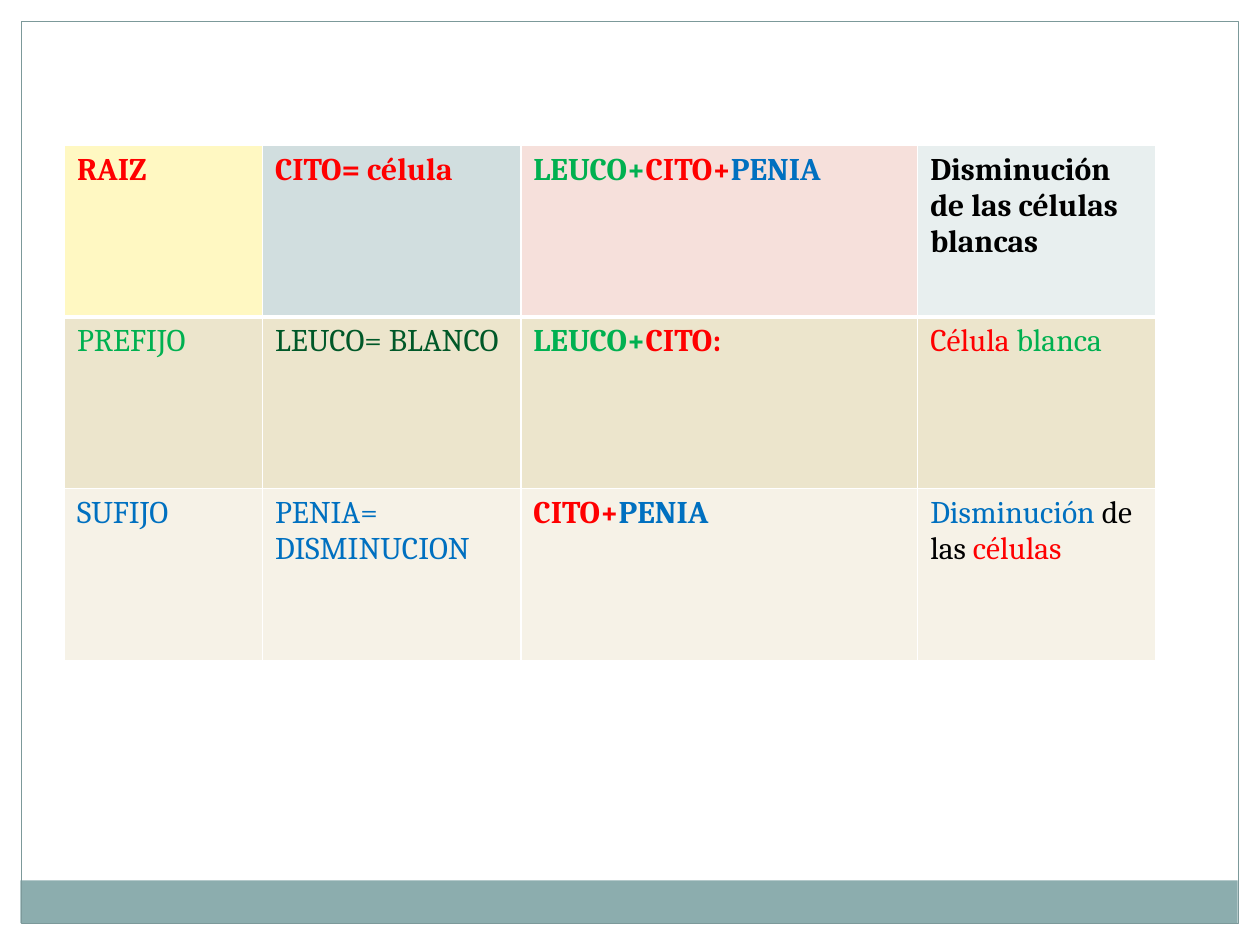
"""Builds a slide with a table of word roots, prefixes and suffixes."""
from pptx import Presentation
from pptx.dml.color import RGBColor
from pptx.enum.shapes import MSO_SHAPE
from pptx.enum.text import PP_ALIGN
from pptx.oxml import parse_xml
from pptx.oxml.ns import nsdecls
from pptx.util import Cm, Pt

RED, GREEN, BLUE, BLACK = "FF0000", "00B050", "0070C0", "000000"


def rgb(value):
    return RGBColor.from_string(value)


def border(side, width):
    return parse_xml(
        f'<a:{side} {nsdecls("a")} w="{Pt(width)}"><a:solidFill>'
        f'<a:srgbClr val="FFFFFF"/></a:solidFill></a:{side}>')


prs = Presentation()
prs.slide_width, prs.slide_height = Cm(25.4), Cm(19.05)
s = prs.slides.add_slide(prs.slide_layouts[6])

frame = [
    (0, 0, 25.4, 0.43, "FFFFFF", None),
    (24.97, 0, 0.43, 19.05, "FFFFFF", None),
    (0, 0, 0.43, 19.05, "FFFFFF", None),
    (0.41, 17.75, 24.54, 0.86, "8CADAE", None),
    (0.43, 0.43, 24.54, 18.19, None, "7C999A"),
]
for *box, fill, line in frame:
    sp = s.shapes.add_shape(MSO_SHAPE.RECTANGLE, *[Cm(v) for v in box])
    sp.shadow.inherit = False
    if fill:
        sp.fill.solid()
        sp.fill.fore_color.rgb = rgb(fill)
    else:
        sp.fill.background()
    if line:
        sp.line.color.rgb = rgb(line)
        sp.line.width = Pt(0.75)
    else:
        sp.line.fill.background()

widths = [3.99, 5.21, 8, 4.8]
row_height = 3.46
fills = [
    ["FFF8C2", "D1DEDF", "F6E0DB", "E8EFEF"],
    ["ECE5CC"] * 4,
    ["F6F2E7"] * 4,
]
rows = [
    [[("RAIZ", RED)],
     [("CITO= célula", RED)],
     [("LEUCO+", GREEN), ("CITO+", RED), ("PENIA", BLUE)],
     [("Disminución de las células blancas", BLACK)]],
    [[("PREFIJO", GREEN)],
     [("LEUCO= BLANCO", "005828")],
     [("LEUCO+", GREEN), ("CITO:", RED)],
     [("Célula ", RED), ("blanca", GREEN)]],
    [[("SUFIJO", BLUE)],
     [("PENIA= DISMINUCION", BLUE)],
     [("CITO+", RED), ("PENIA", BLUE)],
     [("Disminución ", BLUE), ("de las ", BLACK), ("células", RED)]],
]

tbl = s.shapes.add_table(len(rows), len(widths), Cm(1.3), Cm(2.93),
                         Cm(sum(widths)), Cm(row_height * len(rows))).table
for col, width in zip(tbl.columns, widths):
    col.width = Cm(width)
for row in tbl.rows:
    row.height = Cm(row_height)

for i, row in enumerate(rows):
    sides = {"lnL": 1, "lnR": 1, "lnT": 3 if i == 1 else 1, "lnB": 3 if i == 0 else 1}
    for j, runs in enumerate(row):
        cell = tbl.cell(i, j)
        tcPr = cell._tc.get_or_add_tcPr()
        for side, width in sides.items():
            tcPr.append(border(side, width))
        cell.fill.solid()
        cell.fill.fore_color.rgb = rgb(fills[i][j])
        p = cell.text_frame.paragraphs[0]
        if (i, j) == (2, 1):
            p.alignment = PP_ALIGN.JUSTIFY
        fmt = {"name": "Cambria", "size": Pt(18), "bold": i == 0 or j == 2}
        for text, color in runs:
            r = p.add_run()
            r.text = text
            for key, value in fmt.items():
                setattr(r.font, key, value)
            r.font.color.rgb = rgb(color)

prs.save("out.pptx")
